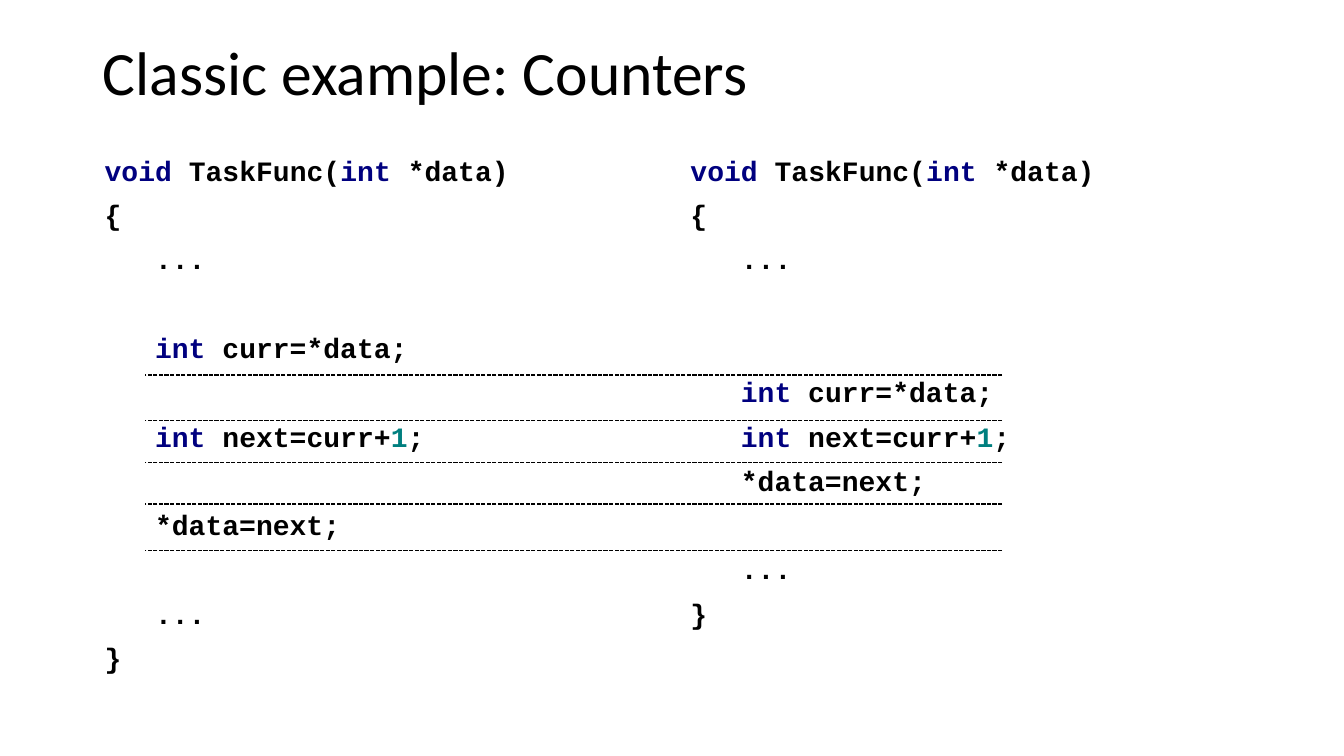
from pptx import Presentation
from pptx.dml.color import RGBColor
from pptx.enum.dml import MSO_LINE
from pptx.enum.shapes import MSO_CONNECTOR
from pptx.enum.text import MSO_ANCHOR
from pptx.util import Inches, Pt
from lxml import etree

MIDDLE, TOP = MSO_ANCHOR.MIDDLE, MSO_ANCHOR.TOP
STRAIGHT = MSO_CONNECTOR.STRAIGHT
SHORT_DASH = MSO_LINE.SQUARE_DOT
DRAWING_NS = "http://schemas.openxmlformats.org/drawingml/2006/main"

BLACK, KEYWORD, NUMBER = "000000", "00007F", "007F7F"
CODE_SIZE = 20
LINE_SPACING = 0.9
SPACE_BEFORE = 10
ROW_PITCH = 31.7  # points from one code row to the next

# Code statements as (text, colour) runs
SIGNATURE = [("void ", KEYWORD), ("TaskFunc(", BLACK),
             ("int ", KEYWORD), ("*data)", BLACK)]
OPEN, CLOSE, ELLIPSIS = [("{", BLACK)], [("}", BLACK)], [("...", BLACK)]
READ = [("int ", KEYWORD), ("curr=*data;", BLACK)]
ADD = [("int ", KEYWORD), ("next=curr+", BLACK), ("1", NUMBER), (";", BLACK)]
WRITE = [("*data=next;", BLACK)]

# Each task: row number -> statement; skipped rows are waiting time
FIRST_TASK = {0: SIGNATURE, 1: OPEN, 2: ELLIPSIS, 4: READ, 6: ADD,
              8: WRITE, 10: ELLIPSIS, 11: CLOSE}
SECOND_TASK = {0: SIGNATURE, 1: OPEN, 2: ELLIPSIS, 5: READ, 6: ADD,
               7: WRITE, 9: ELLIPSIS, 10: CLOSE}
STEP_LINES = [3.72, 4.17, 4.59, 5.0, 5.46]


def rgb(value):
    return RGBColor.from_string(value)


def add_frame(slide, left, top, width, height, anchor):
    box = slide.shapes.add_textbox(Inches(left), Inches(top),
                                   Inches(width), Inches(height))
    frame = box.text_frame
    frame.word_wrap = True
    frame.vertical_anchor = anchor
    return frame


def add_run(paragraph, text, font, size, color, bold=False):
    run = paragraph.add_run()
    run.text = text
    run.font.name = font
    run.font.size = Pt(size)
    run.font.bold = bold
    run.font.color.rgb = rgb(color)


def add_title(slide, text):
    paragraph = add_frame(slide, 0.92, 0.13, 11.5, 1.24, MIDDLE).paragraphs[0]
    paragraph.line_spacing = LINE_SPACING
    add_run(paragraph, text, "Calibri", 44, BLACK)


def add_code(slide, left, task):
    frame = add_frame(slide, left, 1.51, 5.67, 5.4, TOP)
    previous = -1
    for row, statement in task.items():
        paragraph = frame.add_paragraph() if row else frame.paragraphs[0]
        paragraph.line_spacing = LINE_SPACING
        skipped = row - previous - 1
        paragraph.space_before = Pt(SPACE_BEFORE + skipped * ROW_PITCH)
        if statement not in (SIGNATURE, OPEN, CLOSE):
            paragraph._p.get_or_add_pPr().set("marL", str(Inches(0.5)))
        for text, color in statement:
            add_run(paragraph, text, "Courier New", CODE_SIZE, color, True)
        previous = row


def add_step_line(slide, y):
    line = slide.shapes.add_connector(STRAIGHT, Inches(9.94), Inches(y),
                                      Inches(1.44), Inches(y))
    line.line.color.rgb = rgb(BLACK)
    line.line.width = Pt(1)
    line.line.dash_style = SHORT_DASH
    etree.SubElement(line._element.spPr, f"{{{DRAWING_NS}}}effectLst")


def main():
    prs = Presentation()
    prs.slide_width, prs.slide_height = Inches(13.33), Inches(7.5)
    slide = prs.slides.add_slide(prs.slide_layouts[6])

    add_title(slide, "Classic example: Counters")

    # Two tasks side by side, rows aligned in time
    add_code(slide, 0.94, FIRST_TASK)
    add_code(slide, 6.75, SECOND_TASK)

    # Boundaries between time steps
    for y in STEP_LINES:
        add_step_line(slide, y)

    prs.save("out.pptx")


if __name__ == "__main__":
    main()
